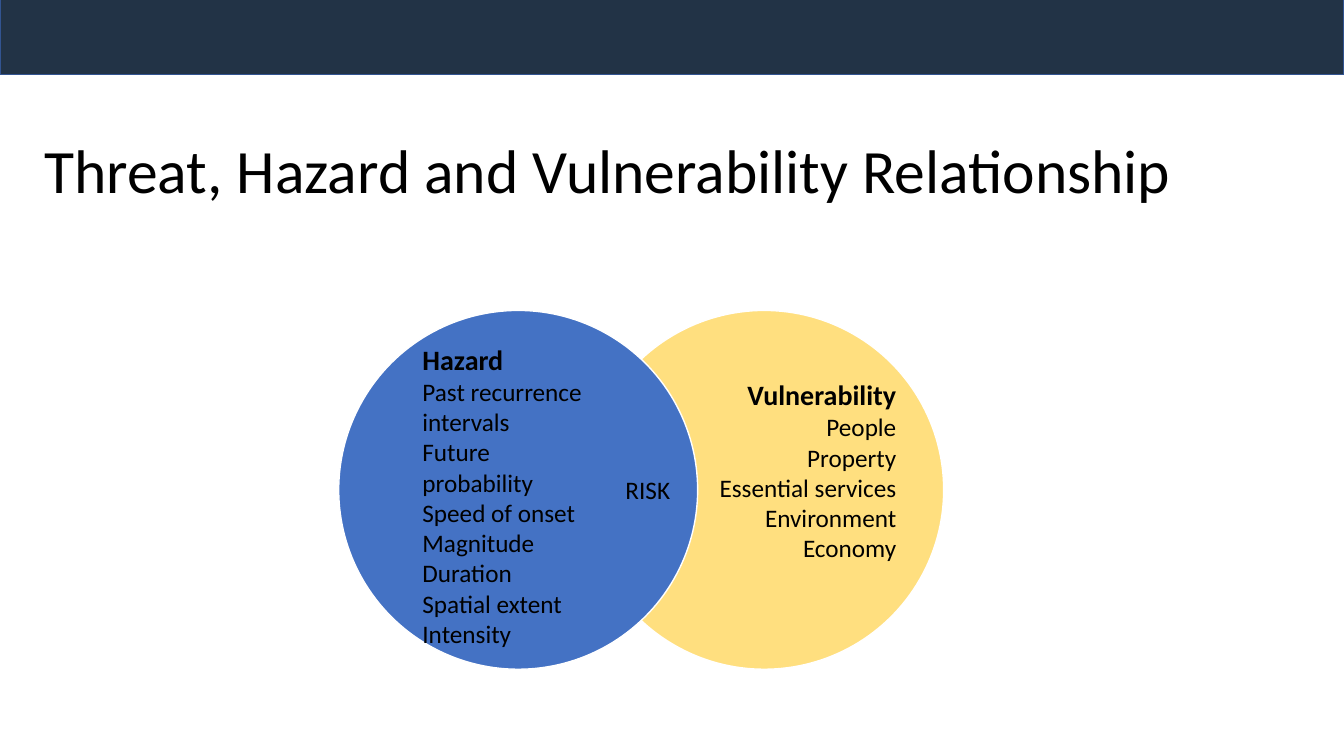
from pptx import Presentation
from pptx.dml.color import RGBColor
from pptx.enum.shapes import MSO_SHAPE
from pptx.enum.text import MSO_ANCHOR, PP_ALIGN
from pptx.oxml.ns import qn
from pptx.util import Inches, Pt
from lxml import etree

RECT, OVAL = MSO_SHAPE.RECTANGLE, MSO_SHAPE.OVAL
TOP, MID = MSO_ANCHOR.TOP, MSO_ANCHOR.MIDDLE
LEFT, RIGHT, MIDDLE = PP_ALIGN.LEFT, PP_ALIGN.RIGHT, PP_ALIGN.CENTER

TITLE = "Threat, Hazard and Vulnerability Relationship"
RISK = "RISK"
HAZARD = ["Hazard", "Past recurrence intervals", "Future probability",
          "Speed of onset", "Magnitude", "Duration", "Spatial extent",
          "Intensity"]
VULNER = ["Vulnerability", "People", "Property", "Essential services",
          "Environment", "Economy"]

WIDE, HIGH = 13.33, 7.5
SIZE, STEP = 3.56, 2.44
X, Y = 3.36, 3.08
BAR = 0.78


def color(text):
    return RGBColor.from_string(text)


def shape(slide, kind, box, fill, line, alpha=100):
    item = slide.shapes.add_shape(kind, *map(Inches, box))
    item.shadow.inherit = False
    item.fill.solid()
    item.fill.fore_color.rgb = color(fill)
    item.line.color.rgb = color(line)
    item.line.width = Pt(1)
    if alpha < 100:
        tint = item.fill._xPr.find(qn("a:solidFill"))[0]
        etree.SubElement(tint, qn("a:alpha"), val=str(alpha * 1000))


def text(slide, box, rows, align=LEFT, anchor=TOP, wrap=True, pad=0, gap=None):
    frame = slide.shapes.add_textbox(*map(Inches, box)).text_frame
    frame.word_wrap = wrap
    frame.vertical_anchor = anchor
    frame.margin_left = frame.margin_right = Inches(pad)
    frame.margin_top = frame.margin_bottom = 0
    for i, (words, size, bold) in enumerate(rows):
        para = frame.add_paragraph() if i else frame.paragraphs[0]
        para.alignment = align
        if gap:
            para.line_spacing = gap
        run = para.add_run()
        run.text = words
        run.font.name = "Calibri"
        run.font.size = Pt(size)
        run.font.bold = bold
        run.font.color.rgb = color("000000")


def rows(items):
    return [(words, 18 if i else 20, not i) for i, words in enumerate(items)]


def main():
    deck = Presentation()
    deck.slide_width, deck.slide_height = Inches(WIDE), Inches(HIGH)
    slide = deck.slides.add_slide(deck.slide_layouts[6])

    shape(slide, RECT, (0, -0.04, WIDE, BAR), "223346", "325491")
    text(slide, (0.34, 1, 12.68, 1.45), [(TITLE, 44, False)],
         anchor=MID, pad=0.1, gap=0.9)

    shape(slide, OVAL, (X + STEP, Y, SIZE, SIZE), "FFC000", "FFFFFF", 50)
    shape(slide, OVAL, (X, Y, SIZE, SIZE), "4472C4", "FFFFFF")

    text(slide, (X + 0.83, Y + 0.32, 1.64, 3.04), rows(HAZARD))
    text(slide, (X + STEP + 1.09, Y + 0.67, 2, 1.84), rows(VULNER), RIGHT)
    text(slide, (6.1, 4.66, 0.65, 0.4), [(RISK, 18, False)],
         MIDDLE, MID, False)

    deck.save("out.pptx")


if __name__ == "__main__":
    main()
